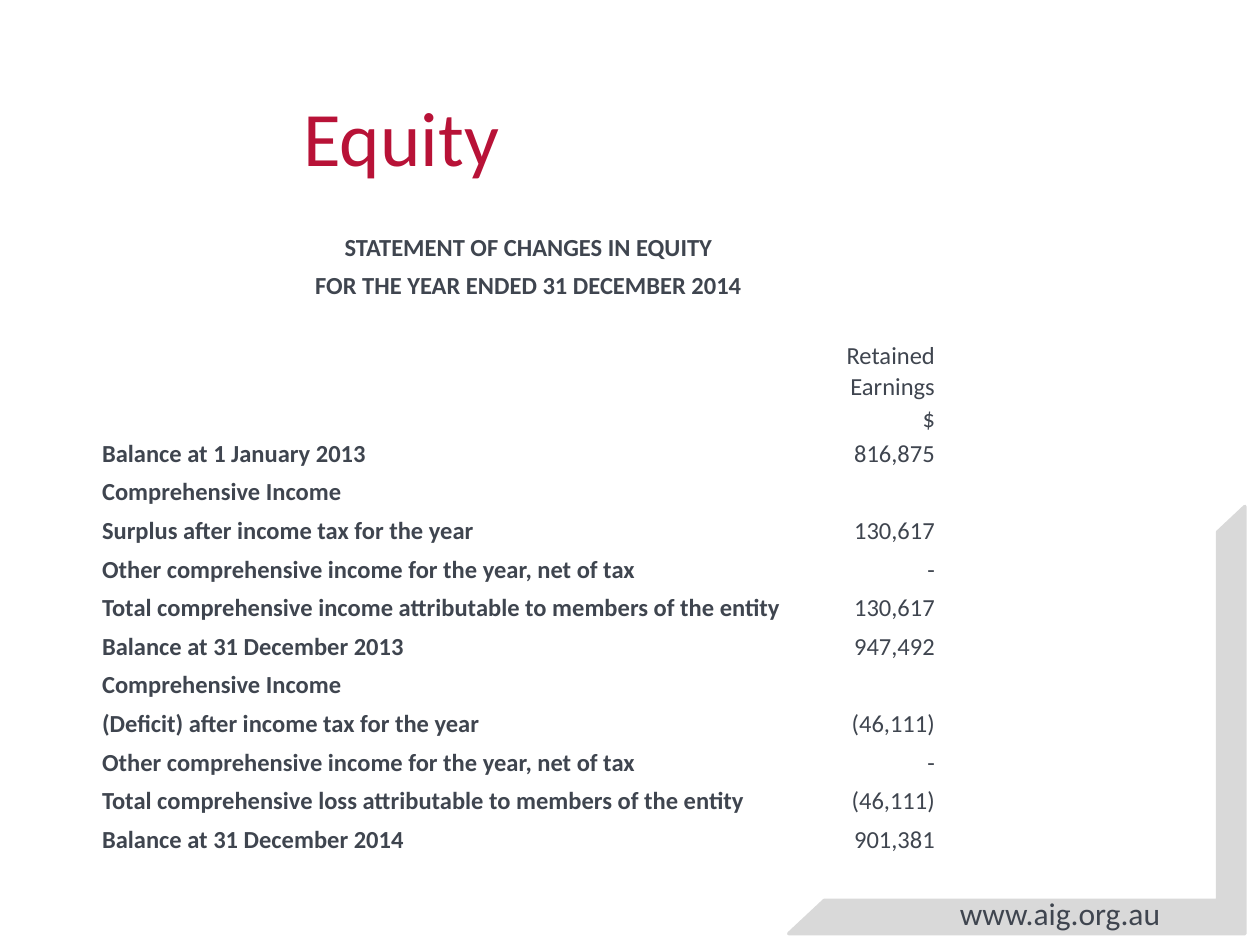
from lxml import etree
from pptx import Presentation
from pptx.dml.color import RGBColor
from pptx.enum.shapes import MSO_SHAPE
from pptx.enum.text import MSO_ANCHOR, PP_ALIGN
from pptx.oxml.ns import qn
from pptx.util import Inches, Pt

LEFT, CENTER, RIGHT = PP_ALIGN.LEFT, PP_ALIGN.CENTER, PP_ALIGN.RIGHT
TOP, MIDDLE, BOTTOM = MSO_ANCHOR.TOP, MSO_ANCHOR.MIDDLE, MSO_ANCHOR.BOTTOM
HALF_FRAME = MSO_SHAPE.HALF_FRAME

FONT = "Calibri"
INK, RED, GREY, WHITE = "3F454F", "B81237", "D9D9D9", "FFFFFF"

HEADINGS = ["STATEMENT OF CHANGES IN EQUITY", "FOR THE YEAR ENDED 31 DECEMBER 2014"]
COLUMN_HEADS = ["Retained", "Earnings", "$"]
ENTRIES = [
    ("Balance at 1 January 2013", "816,875"),
    ("Comprehensive Income", ""),
    ("Surplus after income tax for the year", "130,617"),
    ("Other comprehensive income for the year, net of tax", "-"),
    ("Total comprehensive income attributable to members of the entity", "130,617"),
    ("Balance at 31 December 2013", "947,492"),
    ("Comprehensive Income", ""),
    ("(Deficit) after income tax for the year", "(46,111)"),
    ("Other comprehensive income for the year, net of tax", "-"),
    ("Total comprehensive loss attributable to members of the entity", "(46,111)"),
    ("Balance at 31 December 2014", "901,381"),
]
COLUMN_WIDTHS = [5.83, 0.9, 0.12]
TABLE_HEIGHT, HEAD_ROW_HEIGHT = 5.04, 0.25


def color(hex_value):
    return RGBColor.from_string(hex_value)


def write(frame, text, size=14, ink=INK, bold=False, align=LEFT):
    para = frame.paragraphs[0]
    para.alignment = align
    span = para.add_run()
    span.text = text
    span.font.name = FONT
    span.font.size = Pt(size)
    span.font.bold = bold
    span.font.color.rgb = color(ink)


def add_text(page, text, left, top, width, height, anchor=TOP, **text_format):
    box = page.shapes.add_textbox(Inches(left), Inches(top), Inches(width), Inches(height))
    box.text_frame.word_wrap = True
    box.text_frame.vertical_anchor = anchor
    write(box.text_frame, text, **text_format)


def add_corner_frame(page):
    frame = page.shapes.add_shape(HALF_FRAME, Inches(6.26), Inches(4.02), Inches(3.62), Inches(3.39))
    frame.rotation = 180
    frame.adjustments[0] = 0.078
    frame.adjustments[1] = 0.064
    frame.shadow.inherit = False
    frame.fill.solid()
    frame.fill.fore_color.rgb = color(GREY)
    frame.line.color.rgb = color(GREY)
    frame.line.width = Pt(2)


def style_cell(cell):
    """Set margins, white borders and a small empty-line size, and clear the fill."""
    cell.margin_left = cell.margin_right = Inches(0.06)
    cell.margin_top = cell.margin_bottom = 0
    cell.vertical_anchor = MIDDLE
    properties = cell._tc.get_or_add_tcPr()
    for side in ("a:lnL", "a:lnR", "a:lnT", "a:lnB"):
        border = etree.SubElement(properties, qn(side), w=str(Pt(1)))
        fill = etree.SubElement(border, qn("a:solidFill"))
        etree.SubElement(fill, qn("a:srgbClr"), val=WHITE)
    cell.fill.background()
    end = etree.SubElement(cell.text_frame.paragraphs[0]._p, qn("a:endParaRPr"))
    end.set("sz", "1400")


def add_statement(page):
    first_head = len(HEADINGS) + 1
    first_entry = first_head + len(COLUMN_HEADS)
    row_count = first_entry + len(ENTRIES)
    row_height = (TABLE_HEIGHT - len(COLUMN_HEADS) * HEAD_ROW_HEIGHT) / (row_count - len(COLUMN_HEADS))
    table = page.shapes.add_table(row_count, len(COLUMN_WIDTHS), Inches(0.75), Inches(1.78),
                                  Inches(sum(COLUMN_WIDTHS)), Inches(TABLE_HEIGHT)).table
    table.first_row = table.horz_banding = False
    for column, width in zip(table.columns, COLUMN_WIDTHS):
        column.width = Inches(width)
    for index, row in enumerate(table.rows):
        is_head = first_head <= index < first_entry
        row.height = Inches(HEAD_ROW_HEIGHT if is_head else row_height)
    for cell in table.iter_cells():
        style_cell(cell)

    for index in range(first_head):
        table.cell(index, 0).merge(table.cell(index, 2))
    table.cell(first_head, 0).merge(table.cell(first_entry - 1, 0))

    for index, heading in enumerate(HEADINGS):
        cell = table.cell(index, 0)
        cell.vertical_anchor = BOTTOM
        write(cell.text_frame, heading, bold=True, align=CENTER)
    for index, head in enumerate(COLUMN_HEADS, first_head):
        write(table.cell(index, 1).text_frame, head, align=RIGHT)
    for index, (label, amount) in enumerate(ENTRIES, first_entry):
        write(table.cell(index, 0).text_frame, label, bold=True)
        if amount:
            write(table.cell(index, 1).text_frame, amount, align=RIGHT)


def main():
    deck = Presentation()
    deck.slide_width, deck.slide_height = Inches(10), Inches(7.5)
    page = deck.slides.add_slide(deck.slide_layouts[6])
    add_corner_frame(page)
    add_text(page, "www.aig.org.au", 7.52, 7.05, 2.13, 0.4, size=18)
    add_text(page, "Equity", 0.5, 0.3, 5.37, 1.56, anchor=MIDDLE, size=44, ink=RED, align=CENTER)
    add_statement(page)
    deck.save("out.pptx")


if __name__ == "__main__":
    main()
